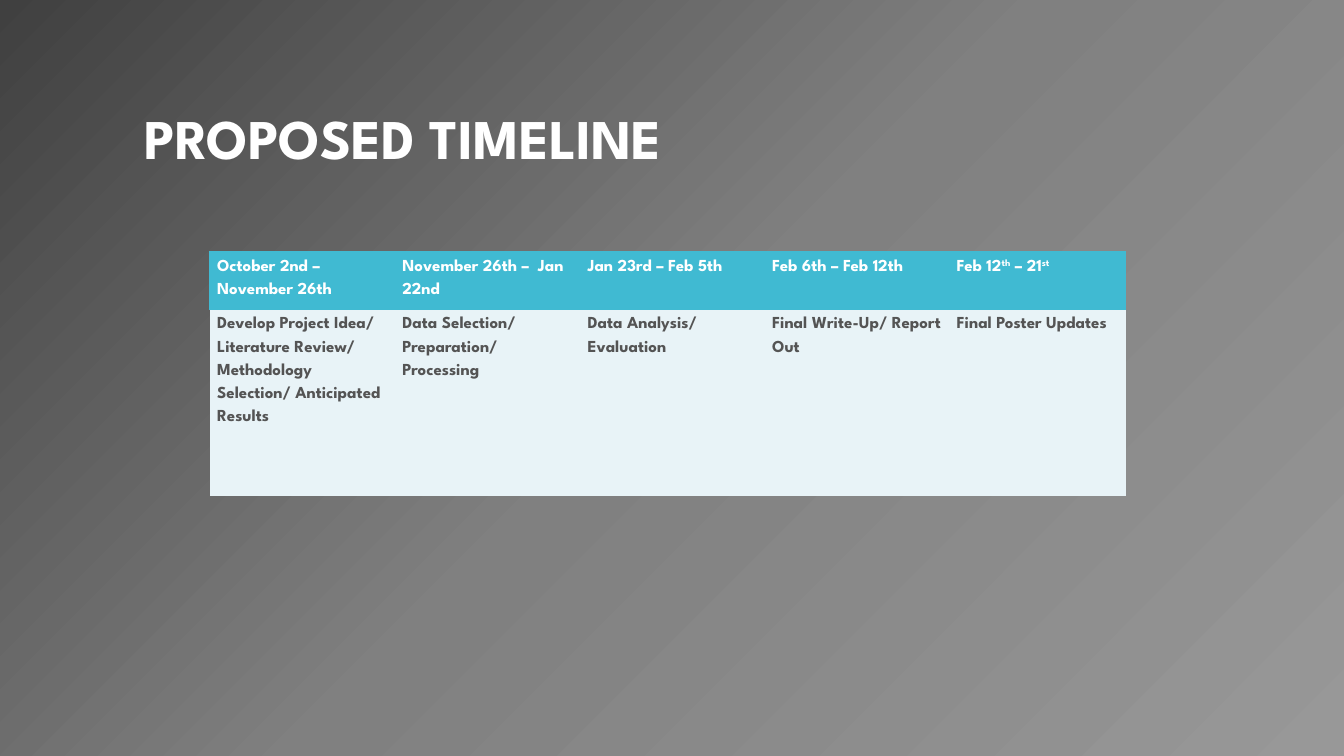
from dataclasses import dataclass

from lxml.etree import SubElement
from pptx import Presentation
from pptx.dml.color import RGBColor
from pptx.enum.text import MSO_ANCHOR, PP_ALIGN
from pptx.oxml.ns import qn
from pptx.util import Cm, Pt


@dataclass(frozen=True)
class Theme:
    font: str = "League Spartan"
    title_size: int = 40
    table_size: int = 12
    white: str = "FFFFFF"
    body_text: str = "545454"
    header_fill: str = "40BAD2"
    body_fill: str = "E8F3F7"
    backdrop: tuple = ((0, "989898"), (50, "808080"), (100, "404040"))


THEME = Theme()
PLAIN_TABLE_STYLE = "{2D5ABB26-0587-4C30-8999-92F81FD0307C}"
COLUMN_WIDTHS = (4.67, 4.67, 4.65, 4.65, 4.45)
ROW_HEIGHTS = (1.45, 4.7)

# Each phase: date pieces (every second piece is superscript), then its task
PHASES = (
    (("October 2nd – November 26th",),
     "Develop Project Idea/ Literature Review/ Methodology Selection/ Anticipated Results"),
    (("November 26th –  Jan 22nd",), "Data Selection/ Preparation/ Processing"),
    (("Jan 23rd – Feb 5th",), "Data Analysis/ Evaluation"),
    (("Feb 6th – Feb 12th",), "Final Write-Up/ Report Out"),
    (("Feb 12", "th", " – 21", "st"), "Final Poster Updates"),
)


def format_span(span, size, color):
    span.font.name = THEME.font
    span.font.size = Pt(size)
    span.font.bold = True
    span.font.color.rgb = RGBColor.from_string(color)


def paint_background(page):
    page.background.fill.gradient()
    gradient = page.element.find(".//" + qn("a:gradFill"))
    for child in list(gradient):
        gradient.remove(child)
    stops = SubElement(gradient, qn("a:gsLst"))
    for position, color in THEME.backdrop:
        stop = SubElement(stops, qn("a:gs"), pos=str(position * 1000))
        SubElement(stop, qn("a:srgbClr"), val=color)
    # Rings spread from the bottom right corner
    rings = SubElement(gradient, qn("a:path"))
    rings.set("path", "circle")
    SubElement(rings, qn("a:fillToRect"), l="100000", t="100000")


def add_title(page, text):
    title = page.shapes.title
    title.left, title.top = Cm(3.39), Cm(0.76)
    title.width, title.height = Cm(27.1), Cm(3.69)
    frame = title.text_frame
    frame.text = text
    frame.word_wrap = True
    frame.vertical_anchor = MSO_ANCHOR.BOTTOM
    para = frame.paragraphs[0]
    para.alignment = PP_ALIGN.LEFT
    para.line_spacing = 0.9
    format_span(para.runs[0], THEME.title_size, THEME.white)


def outline_cell(cell, color):
    properties = cell._tc.get_or_add_tcPr()
    for index, side in enumerate(("lnL", "lnR", "lnT", "lnB")):
        line = properties.makeelement(qn("a:" + side), {"w": str(Pt(1))})
        properties.insert(index, line)
        fill = SubElement(line, qn("a:solidFill"))
        SubElement(fill, qn("a:srgbClr"), val=color)


def fill_cell(cell, pieces, text_color, fill_color):
    cell.margin_left = cell.margin_right = Cm(0.19)
    cell.margin_top = cell.margin_bottom = 0
    cell.fill.solid()
    cell.fill.fore_color.rgb = RGBColor.from_string(fill_color)
    para = cell.text_frame.paragraphs[0]
    para.line_spacing = 1.5
    for index, piece in enumerate(pieces):
        span = para.add_run()
        span.text = piece
        format_span(span, THEME.table_size, text_color)
        if index % 2:
            span.font._element.set("baseline", "30000")


def add_timeline(page):
    frame = page.shapes.add_table(
        len(ROW_HEIGHTS), len(PHASES), Cm(5.28), Cm(6.35),
        Cm(sum(COLUMN_WIDTHS)), Cm(sum(ROW_HEIGHTS)))
    table = frame.table
    table.horz_banding = False
    table._tbl.tblPr.find(qn("a:tableStyleId")).text = PLAIN_TABLE_STYLE
    for row, height in zip(table.rows, ROW_HEIGHTS):
        row.height = Cm(height)
    for index, (dates, task) in enumerate(PHASES):
        table.columns[index].width = Cm(COLUMN_WIDTHS[index])
        header = table.cell(0, index)
        fill_cell(header, dates, THEME.white, THEME.header_fill)
        outline_cell(header, THEME.header_fill)
        fill_cell(table.cell(1, index), (task,), THEME.body_text, THEME.body_fill)


def main():
    deck = Presentation()
    deck.slide_width, deck.slide_height = Cm(33.87), Cm(19.05)
    page = deck.slides.add_slide(deck.slide_layouts.get_by_name("Title Only"))
    paint_background(page)
    add_title(page, "PROPOSED TIMELINE")
    add_timeline(page)
    deck.save("out.pptx")


if __name__ == "__main__":
    main()
